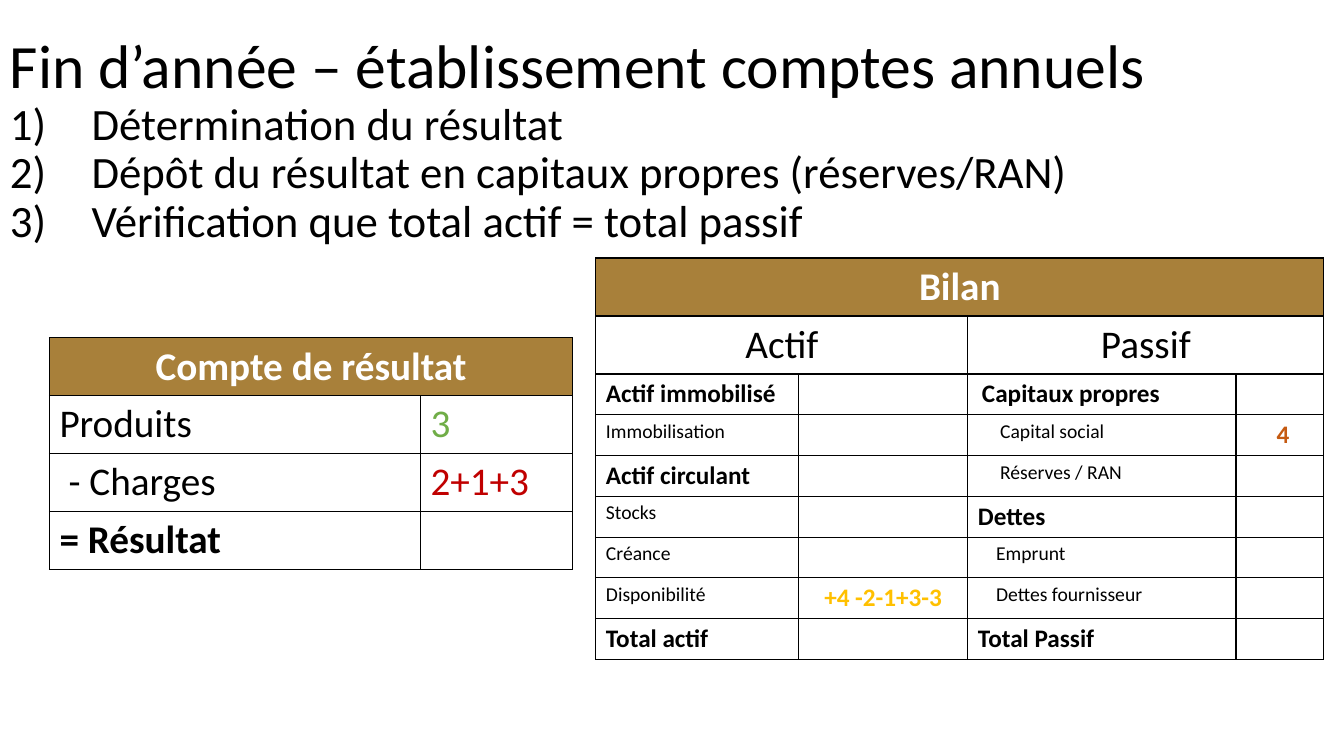
from lxml import etree
from pptx import Presentation
from pptx.dml.color import RGBColor
from pptx.enum.text import MSO_ANCHOR, PP_ALIGN
from pptx.oxml.ns import qn
from pptx.util import Inches, Pt

LEFT, CENTER = PP_ALIGN.LEFT, PP_ALIGN.CENTER
TOP = MSO_ANCHOR.TOP
FONT = "Calibri"
BLACK, WHITE, GOLD = "000000", "FFFFFF", "A8803A"
CELL_MARGIN = 0.1

# Content
TITLE = "Fin d’année – établissement comptes annuels"
STEPS = [
    "Détermination du résultat",
    "Dépôt du résultat en capitaux propres (réserves/RAN)",
    "Vérification que total actif = total passif",
]

# Cell styles: size, bold, colour, alignment, indent, fill
BASE = dict(size=28, bold=False, color=BLACK, align=LEFT, indent=0, fill=None)
HEADER = dict(bold=True, color=WHITE, align=CENTER, fill=GOLD)
SIDE = dict(align=CENTER)
GROUP = dict(size=18, bold=True)
ITEM = dict(size=14)
AMOUNT = dict(size=18, bold=True, align=CENTER)

# Cells: (row, column, columns spanned, text, style)
RESULT = dict(
    position=(0.49, 3.35), columns=[3.68, 1.51], rows=[0.575] * 4,
    cells=[
        (0, 0, 2, "Compte de résultat", HEADER),
        (1, 0, 1, "Produits", {}),
        (1, 1, 1, "3", dict(color="70AD47")),
        (2, 0, 1, "- Charges", dict(indent=0.09)),
        (2, 1, 1, "2+1+3", dict(color="C00000")),
        (3, 0, 1, "= Résultat", dict(bold=True)),
    ],
)
BALANCE = dict(
    position=(5.91, 2.56), columns=[2.01, 1.68, 2.66, 0.87],
    rows=[0.575] * 2 + [0.405] * 7,
    cells=[
        (0, 0, 4, "Bilan", HEADER),
        (1, 0, 2, "Actif", SIDE),
        (1, 2, 2, "Passif", SIDE),
        (2, 0, 1, "Actif immobilisé", GROUP),
        (2, 2, 1, "Capitaux propres", GROUP | dict(indent=0.04)),
        (3, 0, 1, "Immobilisation", ITEM),
        (3, 2, 1, "Capital social", ITEM | dict(indent=0.22)),
        (3, 3, 1, "4", AMOUNT | dict(color="C55A11", indent=0.06)),
        (4, 0, 1, "Actif circulant", GROUP),
        (4, 2, 1, "Réserves / RAN", ITEM | dict(indent=0.22)),
        (5, 0, 1, "Stocks", ITEM),
        (5, 2, 1, "Dettes", GROUP),
        (6, 0, 1, "Créance", ITEM),
        (6, 2, 1, "Emprunt", ITEM | dict(indent=0.18)),
        (7, 0, 1, "Disponibilité", ITEM),
        (7, 1, 1, "+4 -2-1+3-3", AMOUNT | dict(color="FFC000")),
        (7, 2, 1, "Dettes fournisseur", ITEM | dict(indent=0.18)),
        (8, 0, 1, "Total actif", GROUP),
        (8, 2, 1, "Total Passif", GROUP),
    ],
)


def rgb(color):
    return RGBColor.from_string(color)


def add_run(paragraph, text, size, color=BLACK, bold=False):
    run = paragraph.add_run()
    run.text = text
    run.font.name = FONT
    run.font.size = Pt(size)
    run.font.bold = bold
    run.font.color.rgb = rgb(color)


def number_paragraph(paragraph, indent):
    properties = paragraph._p.get_or_add_pPr()
    properties.set("marL", str(Inches(indent)))
    properties.set("indent", str(-Inches(indent)))
    etree.SubElement(properties, qn("a:buFont"), typeface="+mj-lt")
    etree.SubElement(properties, qn("a:buAutoNum"), type="arabicParenR")


def add_borders(cell):
    properties = cell._tc.get_or_add_tcPr()
    for side in ("lnL", "lnR", "lnT", "lnB"):
        line = etree.SubElement(properties, qn("a:" + side), w=str(Pt(1)))
        fill = etree.SubElement(line, qn("a:solidFill"))
        etree.SubElement(fill, qn("a:srgbClr"), val=BLACK)


def add_heading(slide):
    box = slide.shapes.add_textbox(Inches(0), Inches(0.3), Inches(12.95), Inches(2.12))
    frame = box.text_frame
    frame.word_wrap = True
    frame.vertical_anchor = TOP
    title = frame.paragraphs[0]
    title.line_spacing = 0.9
    add_run(title, TITLE, 44)
    for step in STEPS:
        paragraph = frame.add_paragraph()
        paragraph.line_spacing = 0.9
        number_paragraph(paragraph, 0.81)
        add_run(paragraph, step, 32)


def add_account(slide, account):
    columns, rows = account["columns"], account["rows"]
    left, top = account["position"]
    frame = slide.shapes.add_table(
        len(rows), len(columns), Inches(left), Inches(top),
        Inches(sum(columns)), Inches(sum(rows)))
    table = frame.table
    table.first_row = table.horz_banding = False
    for column, width in zip(table.columns, columns):
        column.width = Inches(width)
    for row, height in zip(table.rows, rows):
        row.height = Inches(height)
    for cell in table.iter_cells():
        add_borders(cell)
        cell.fill.background()

    # Text and merged headings
    for row, column, span, text, changes in account["cells"]:
        style = BASE | changes
        cell = table.cell(row, column)
        if span > 1:
            cell.merge(table.cell(row, column + span - 1))
        if style["fill"]:
            cell.fill.solid()
            cell.fill.fore_color.rgb = rgb(style["fill"])
        cell.margin_left = Inches(CELL_MARGIN + style["indent"])
        paragraph = cell.text_frame.paragraphs[0]
        paragraph.alignment = style["align"]
        add_run(paragraph, text, style["size"], style["color"], style["bold"])


def main():
    presentation = Presentation()
    presentation.slide_width = Inches(13.33)
    presentation.slide_height = Inches(7.5)
    slide = presentation.slides.add_slide(presentation.slide_layouts[6])
    add_heading(slide)
    for account in (RESULT, BALANCE):
        add_account(slide, account)
    presentation.save("out.pptx")


if __name__ == "__main__":
    main()
